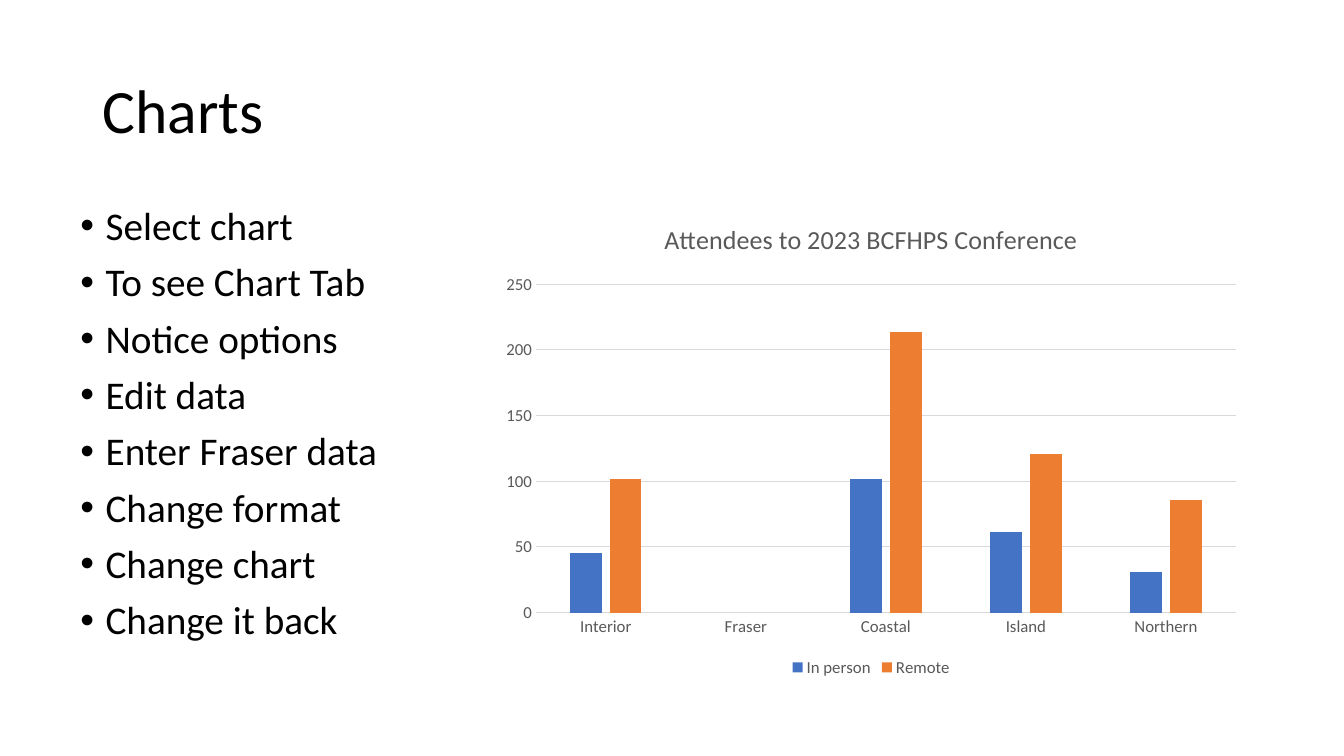
import pptx
import pptx.chart.data
import pptx.dml.color
import pptx.enum.chart
import pptx.enum.text
import pptx.util
from lxml import etree
from pptx.oxml.ns import qn
from pptx.util import Inches, Pt

COLORS = {
    "text": "000000",
    "chart_text": "595959",
    "grid": "D9D9D9",
    "in_person": "4472C4",
    "remote": "ED7D31",
}
FONT = "Calibri"
STEPS = ["Select chart", "To see Chart Tab", "Notice options", "Edit data",
         "Enter Fraser data", "Change format", "Change chart", "Change it back"]
REGIONS = ["Interior", "Fraser", "Coastal", "Island", "Northern"]
ATTENDEES = [
    ("In person", "in_person", [45, None, 102, 61, 31]),
    ("Remote", "remote", [102, None, 214, 121, 86]),
]


def rgb(name):
    return pptx.dml.color.RGBColor.from_string(COLORS[name])


def style_font(font, size, color="text"):
    font.name = FONT
    font.size = Pt(size)
    font.bold = False
    font.color.rgb = rgb(color)


def write_text(paragraph, text, size, color="text", line_spacing=None,
               space_before=None, bullet=None, indent=0.25):
    run = paragraph.add_run()
    run.text = text
    style_font(run.font, size, color)
    if line_spacing:
        paragraph.line_spacing = line_spacing
    if space_before:
        paragraph.space_before = Pt(space_before)
    if bullet:
        properties = paragraph._p.get_or_add_pPr()
        properties.set("marL", str(Inches(indent)))
        properties.set("indent", str(-Inches(indent)))
        bullet_font = etree.SubElement(properties, qn("a:buFont"))
        bullet_font.set("typeface", "Arial")
        etree.SubElement(properties, qn("a:buChar")).set("char", bullet)


class SlideBuilder:
    def __init__(self, presentation):
        self.slide = presentation.slides.add_slide(presentation.slide_layouts[6])

    def text_box(self, lines, left, top, width, height, anchor, **text_format):
        shape = self.slide.shapes.add_textbox(
            Inches(left), Inches(top), Inches(width), Inches(height))
        frame = shape.text_frame
        frame.word_wrap = True
        frame.vertical_anchor = anchor
        for index, line in enumerate(lines):
            paragraph = frame.add_paragraph() if index else frame.paragraphs[0]
            write_text(paragraph, line, **text_format)

    def column_chart(self, title, categories, series, left, top, width, height):
        data = pptx.chart.data.CategoryChartData()
        data.categories = categories
        for name, _, values in series:
            data.add_series(name, values)
        chart = self.slide.shapes.add_chart(
            pptx.enum.chart.XL_CHART_TYPE.COLUMN_CLUSTERED,
            Inches(left), Inches(top), Inches(width), Inches(height), data).chart
        style_font(chart.font, 12, "chart_text")

        # Title and legend
        chart.has_title = True
        write_text(chart.chart_title.text_frame.paragraphs[0], title,
                   size=18.6, color="chart_text")
        chart.chart_title.include_in_layout = False
        chart.has_legend = True
        chart.legend.position = pptx.enum.chart.XL_LEGEND_POSITION.BOTTOM
        chart.legend.include_in_layout = False
        style_font(chart.legend.font, 12, "chart_text")

        # Columns
        plot = chart.plots[0]
        plot.gap_width = 219
        plot.overlap = -27
        plot.vary_by_categories = False
        for columns, (_, color, _) in zip(plot.series, series):
            columns.format.fill.solid()
            columns.format.fill.fore_color.rgb = rgb(color)
            columns.invert_if_negative = False

        # Axes and gridlines
        for axis in (chart.category_axis, chart.value_axis):
            axis.major_tick_mark = pptx.enum.chart.XL_TICK_MARK.NONE
            axis.minor_tick_mark = pptx.enum.chart.XL_TICK_MARK.NONE
            style_font(axis.tick_labels.font, 12, "chart_text")
        value_axis = chart.value_axis
        value_axis.minimum_scale = 0
        value_axis.maximum_scale = 250
        value_axis.major_unit = 50
        value_axis.format.line.fill.background()
        value_axis.has_major_gridlines = True
        for line in (chart.category_axis.format.line,
                     value_axis.major_gridlines.format.line):
            line.color.rgb = rgb("grid")
            line.width = Pt(0.75)


def main():
    presentation = pptx.Presentation()
    presentation.slide_width = Inches(13.33)
    presentation.slide_height = Inches(7.5)
    builder = SlideBuilder(presentation)
    anchors = pptx.enum.text.MSO_ANCHOR

    # Heading
    builder.text_box(["Charts"], 0.92, 0.4, 11.5, 1.45, anchors.MIDDLE,
                     size=44, line_spacing=0.9)

    # Attendance chart
    builder.column_chart("Attendees to 2023 BCFHPS Conference", REGIONS,
                         ATTENDEES, 4.87, 2, 7.54, 4.76)

    # Steps
    builder.text_box(STEPS, 0.7, 2, 3.37, 4.76, anchors.TOP, size=28,
                     line_spacing=0.9, space_before=10, bullet="•")

    presentation.save("out.pptx")


if __name__ == "__main__":
    main()
